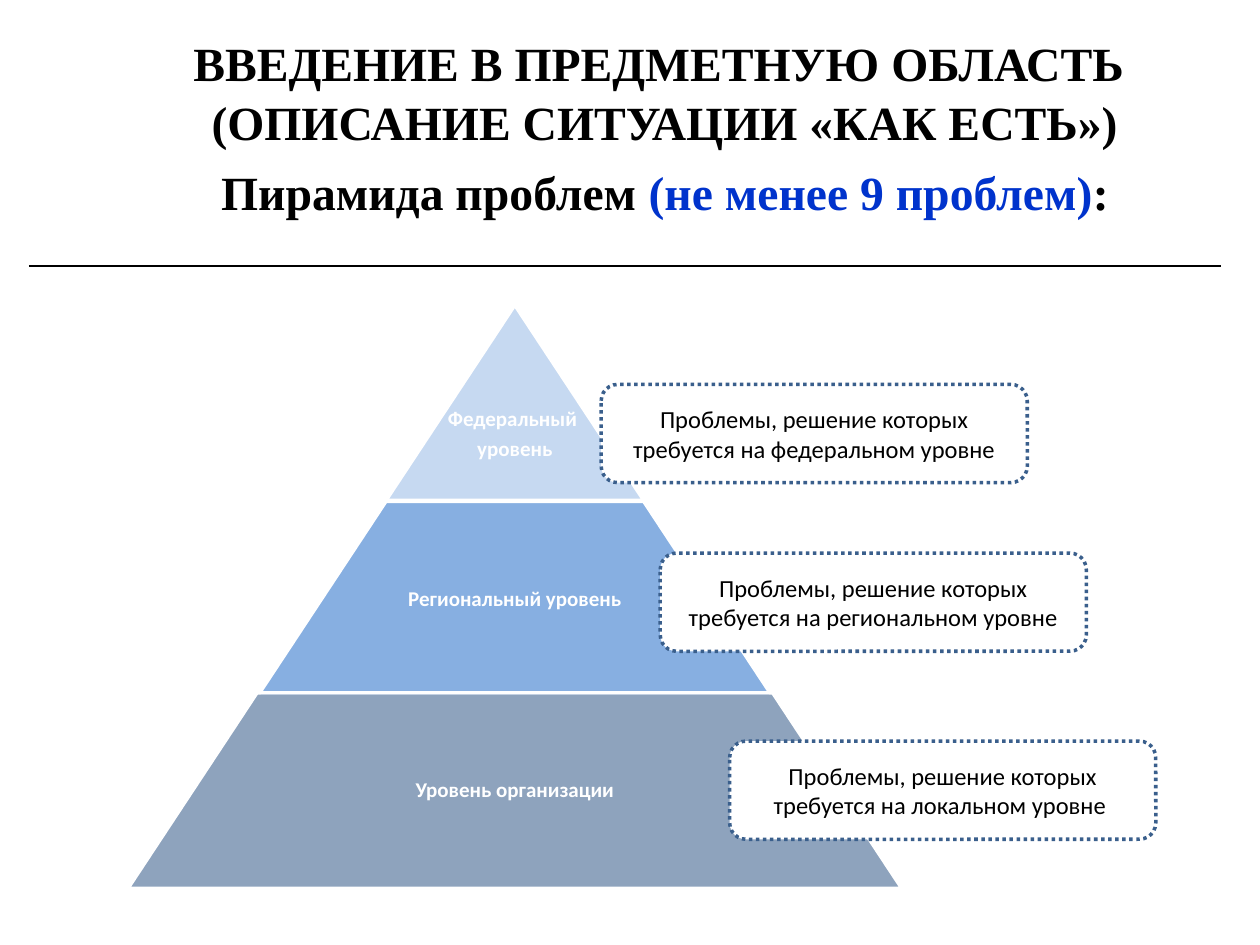
"""Builds a slide with a three-level pyramid of problems."""
from dataclasses import dataclass

import pptx
import pptx.dml.color
import pptx.enum.dml
import pptx.enum.shapes
import pptx.enum.text
import pptx.oxml
import pptx.oxml.ns
import pptx.util
from lxml import etree

Cm, Pt = pptx.util.Cm, pptx.util.Pt
Kind = pptx.enum.shapes.MSO_SHAPE
MID, STEP, HIGH = 10.38, 5.2, 3.94


@dataclass
class Level:
    top: float
    tint: str
    alpha: int
    width: float
    drop: float
    lines: list[str]


@dataclass
class Note:
    left: float
    top: float
    text: str


LEVELS = [
    Level(6.15, "C6D9F1", 100, 5.2, 1.28, ["Федеральный ", "уровень"]),
    Level(10.11, "558ED5", 70, 6.76, 0, ["Региональный уровень"]),
    Level(13.97, "1F497D", 50, 10.13, 0, ["Уровень организации"]),
]
NOTES = [
    Note(12.12, 7.75, "Проблемы, решение которых требуется на федеральном уровне"),
    Note(13.31, 11.15, "Проблемы, решение которых требуется на региональном уровне"),
    Note(14.71, 14.94, "Проблемы, решение которых требуется на локальном уровне "),
]
TITLE = [
    (0.8, [("ВВЕДЕНИЕ В ПРЕДМЕТНУЮ ОБЛАСТЬ ", "000000")]),
    (0.8, [("(ОПИСАНИЕ СИТУАЦИИ «КАК ЕСТЬ»)", "000000")]),
    (1.0, [("Пирамида проблем ", "000000"), ("(не менее 9 проблем)", "0033CC"), (":", "000000")]),
]


def color(code: str) -> pptx.dml.color.RGBColor:
    return pptx.dml.color.RGBColor.from_string(code)


def add_run(para, text: str, face: str, size: float, code: str, bold: bool = False) -> None:
    para.alignment = pptx.enum.text.PP_ALIGN.CENTER
    run = para.add_run()
    run.text = text
    run.font.name, run.font.size, run.font.bold = face, Pt(size), bold
    run.font.color.rgb = color(code)


def add_box(slide, left: float, top: float, width: float, height: float):
    frame = slide.shapes.add_textbox(Cm(left), Cm(top), Cm(width), Cm(height)).text_frame
    frame.word_wrap = True
    return frame


def next_para(frame, index: int):
    return frame.add_paragraph() if index else frame.paragraphs[0]


def add_shape(slide, kind, left: float, top: float, width: float, height: float, fill: str, edge: str):
    shape = slide.shapes.add_shape(kind, Cm(left), Cm(top), Cm(width), Cm(height))
    shape.shadow.inherit = False
    shape.fill.solid()
    shape.fill.fore_color.rgb = color(fill)
    shape.line.color.rgb = color(edge)
    shape.line.width = Pt(2)
    return shape


def add_title(slide) -> None:
    frame = add_box(slide, 3.18, 0.79, 20.45, 3.76)
    for index, (space, runs) in enumerate(TITLE):
        para = next_para(frame, index)
        para.line_spacing, para.space_before = space, Pt(7.4)
        for text, code in runs:
            add_run(para, text, "Times New Roman", 27.2, code, True)


def add_rule(slide) -> None:
    rule = slide.shapes.add_connector(
        pptx.enum.shapes.MSO_CONNECTOR.STRAIGHT, Cm(0.58), Cm(5.36), Cm(24.61), Cm(5.36))
    rule.line.color.rgb = color("000000")
    rule.line.width = Pt(0.75)
    etree.SubElement(rule._element.spPr, pptx.oxml.ns.qn("a:effectLst"))


def add_level(slide, rank: int, level: Level) -> None:
    base = rank * STEP
    shape = add_shape(slide, Kind.TRAPEZOID, MID - base / 2, level.top, base, HIGH, level.tint, "FFFFFF")
    shape.adjustments[0] = STEP / 2 / HIGH
    if level.alpha < 100:
        tint = shape._element.spPr.find(".//" + pptx.oxml.ns.qn("a:srgbClr"))
        etree.SubElement(tint, pptx.oxml.ns.qn("a:alpha"), val=str(level.alpha * 1000))
    frame = add_box(slide, MID - level.width / 2, level.top + level.drop, level.width, HIGH - level.drop)
    frame.vertical_anchor = pptx.enum.text.MSO_ANCHOR.MIDDLE
    frame.margin_left = frame.margin_right = frame.margin_top = frame.margin_bottom = Cm(0.05)
    for index, text in enumerate(level.lines):
        para = next_para(frame, index)
        para.line_spacing, para.space_after = 0.9, Pt(4.2)
        add_run(para, text, "Calibri", 12, "FFFFFF", True)


def add_note(slide, note: Note) -> None:
    shape = add_shape(slide, Kind.ROUNDED_RECTANGLE, note.left, note.top, 8.59, 1.98, "FFFFFF", "3A5F8C")
    shape.line.dash_style = pptx.enum.dml.MSO_LINE.ROUND_DOT
    frame = shape.text_frame
    frame.word_wrap = True
    frame.vertical_anchor = pptx.enum.text.MSO_ANCHOR.MIDDLE
    add_run(frame.paragraphs[0], note.text, "Calibri", 14, "000000")


def main() -> None:
    deck = pptx.Presentation()
    deck.slide_width, deck.slide_height = Cm(25.4), Cm(19.05)
    slide = deck.slides.add_slide(deck.slide_layouts[6])
    add_title(slide)
    add_rule(slide)
    for rank, level in enumerate(LEVELS, 1):
        add_level(slide, rank, level)
    for note in NOTES:
        add_note(slide, note)
    deck.save("out.pptx")


if __name__ == "__main__":
    main()
